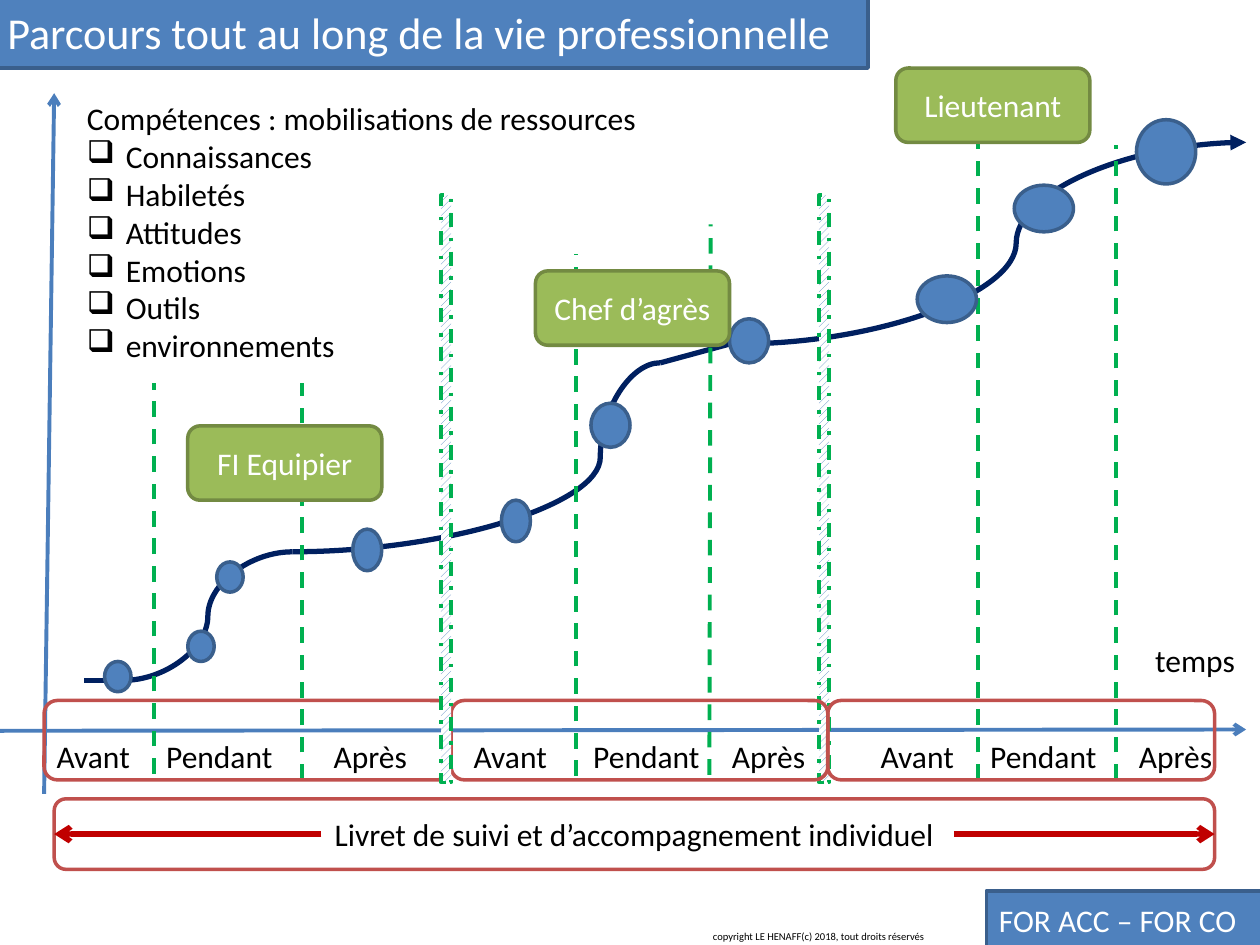
"""Build the slide on the career path of a firefighter."""
import pptx
import pptx.dml.color
import pptx.enum.dml
import pptx.enum.shapes
import pptx.enum.text
import pptx.oxml.ns
import pptx.util
from lxml import etree

THEME = {
    "font": "Calibri", "title": 25.2, "body": 18, "small": 6,
    "black": "000000", "white": "FFFFFF",
    "blue": "4F81BD", "navy": "3A5F8C", "axis": "4B7EBC", "path": "002060",
    "lime": "9BBB59", "moss": "738A42", "green": "00B050",
    "rose": "C0504D", "red": "C00000",
    "edge": 2, "thin": 2.25, "thick": 3,
}

TITLE = "Parcours tout au long de la vie professionnelle"
HEAD = "Compétences : mobilisations de ressources"
SKILLS = ["Connaissances", "Habiletés", "Attitudes", "Emotions", "Outils",
          "environnements"]
STEPS = [("Avant", 0.79), ("Pendant", 1.18), ("Après", 0.95)]
PHASES = [
    (0.35, 3.23, (0.35, 1.22, 2.55)),
    (3.58, 2.99, (3.66, 4.61, 5.71)),
    (6.57, 3.07, (6.89, 7.76, 8.94)),
]
RANKS = [("FI Equipier", 1.49, 3.38), ("Chef d’agrès", 4.25, 2.15),
         ("Lieutenant", 7.11, 0.54)]
AXES = [(-0.04, 5.8, 9.89, 5.79), (0.35, 6.3, 0.43, 0.74)]
CURVES = [
    ((0.98, 5.4, 2.32, 4.38), 0.5, None),
    ((2.32, 4.38, 5.24, 2.88), 0.837, None),
    ((5.87, 2.73, 9.89, 1.13), 0.546, "triangle"),
]
LINKS = [(5.94, 2.69, 5.24, 2.88), (0.67, 5.4, 0.98, 5.4)]
DOTS = {
    (0.21, 0.24): [(1.49, 5.01), (0.83, 5.25), (1.72, 4.46)],
    (0.23, 0.33): [(2.8, 4.2), (3.98, 3.97)],
    (0.31, 0.35): [(4.69, 3.2), (5.79, 2.53)],
    (0.47, 0.37): [(7.28, 2.19), (8.05, 1.47)],
    (0.47, 0.51): [(9.02, 0.95)],
}
DASHES = [
    (1.22, 6.14, 1.22, 3.04), (2.4, 6.19, 2.4, 3.04),
    (4.57, 6.16, 4.57, 2.02), (5.63, 6.15, 5.64, 1.78),
    (7.76, 6.19, 7.76, 1.13), (8.86, 6.19, 8.86, 1.15),
]

Inches = pptx.util.Inches
KIND = pptx.enum.shapes.MSO_SHAPE
JOIN = pptx.enum.shapes.MSO_CONNECTOR
DASH = pptx.enum.dml.MSO_LINE
ALIGN = pptx.enum.text.PP_ALIGN
qn = pptx.oxml.ns.qn

deck = pptx.Presentation()
deck.slide_width, deck.slide_height = Inches(10), Inches(7.5)
slide = deck.slides.add_slide(deck.slide_layouts[6])
shapes = slide.shapes


def tint(name):
    return pptx.dml.color.RGBColor.from_string(THEME[name])


def write(shape, lines, color="black", size="body", align=ALIGN.LEFT):
    frame = shape.text_frame
    frame.word_wrap = True
    frame.text = "\n".join(lines)
    for para in frame.paragraphs:
        para.alignment = align
        for run in para.runs:
            run.font.name = THEME["font"]
            run.font.size = pptx.util.Pt(THEME[size])
            run.font.color.rgb = tint(color)


def label(lines, *spot, size="body"):
    box = shapes.add_textbox(*map(Inches, spot))
    write(box, lines, size=size)
    box.text_frame.auto_size = pptx.enum.text.MSO_AUTO_SIZE.SHAPE_TO_FIT_TEXT
    return box


def block(kind, spot, fill, edge):
    shape = shapes.add_shape(kind, *map(Inches, spot))
    shape.shadow.inherit = False
    if fill:
        shape.fill.solid()
        shape.fill.fore_color.rgb = tint(fill)
    else:
        shape.fill.background()
    shape.line.color.rgb = tint(edge)
    shape.line.width = pptx.util.Pt(THEME["edge"])
    return shape


def stroke(ends, color, width, tip=None, bend=None):
    kind = JOIN.CURVE if bend else JOIN.STRAIGHT
    line = shapes.add_connector(kind, *map(Inches, ends))
    line.line.color.rgb = tint(color)
    line.line.width = pptx.util.Pt(THEME[width])
    props = line.element.spPr
    if tip:
        etree.SubElement(props.find(qn("a:ln")), qn("a:tailEnd"), type=tip)
    if bend:
        etree.SubElement(props.find(".//" + qn("a:avLst")), qn("a:gd"),
                         name="adj1", fmla=f"val {round(bend * 100000)}")
    etree.SubElement(props, qn("a:effectLst"))
    return line


def band(left):
    shape = block(KIND.RECTANGLE, (left, 1.55, 0.08, 4.66), "white", "green")
    shape.fill.patterned()
    shape.fill.pattern = pptx.enum.dml.MSO_PATTERN.WIDE_UPWARD_DIAGONAL
    shape.fill.fore_color.rgb = tint("blue")
    shape.fill.back_color.rgb = tint("white")
    shape.line.dash_style = DASH.DASH_DOT


for ends in AXES:
    stroke(ends, "axis", "thin", "arrow")

notes = label([HEAD] + SKILLS, 0.59, 0.74, 5.59, 2.22)
for para in notes.text_frame.paragraphs[1:]:
    props = para._p.get_or_add_pPr()
    props.set("marL", str(Inches(0.31)))
    props.set("indent", str(-Inches(0.31)))
    etree.SubElement(props, qn("a:buChar"), char="❑")

for ends, bend, tip in CURVES:
    stroke(ends, "path", "thick", tip, bend)
for ends in LINKS:
    stroke(ends, "path", "thick")
for ends in DASHES:
    stroke(ends, "green", "thin").line.dash_style = DASH.DASH
for size, spots in DOTS.items():
    for spot in spots:
        block(KIND.OVAL, spot + size, "blue", "navy")

band(6.5)
for left, width, starts in PHASES:
    block(KIND.ROUNDED_RECTANGLE, (left, 5.56, width, 0.63), None, "rose")
    for (name, wide), start in zip(STEPS, starts):
        label([name], start, 5.8, wide, 0.4)
band(3.5)

for name, left, top in RANKS:
    rank = block(KIND.ROUNDED_RECTANGLE, (left, top, 1.54, 0.59),
                 "lime", "moss")
    write(rank, [name], "white", align=ALIGN.CENTER)

label(["temps"], 9.07, 5.04, 0.95, 0.4)
log = block(KIND.ROUNDED_RECTANGLE, (0.43, 6.34, 9.21, 0.56), None, "rose")
write(log, ["Livret de suivi et d’accompagnement individuel"],
      align=ALIGN.CENTER)
for start, end, side in [(2.55, 0.43, 1), (7.57, 9.64, 3)]:
    arrow = stroke((start, 6.62, end, 6.62), "red", "thick", "arrow")
    arrow.end_connect(log, side)

for text, spot, size in [
    (TITLE, (-0.04, -0.03, 6.93, 0.57), "title"),
    ("FOR ACC – FOR CO", (7.83, 7.07, 2.2, 0.46), "body"),
]:
    write(block(KIND.RECTANGLE, spot, "blue", "navy"), [text], "white", size)
label(["copyright LE HENAFF(c) 2018, tout droits réservés"],
      5.56, 7.33, 2.28, 0.2, size="small")

deck.save("out.pptx")
